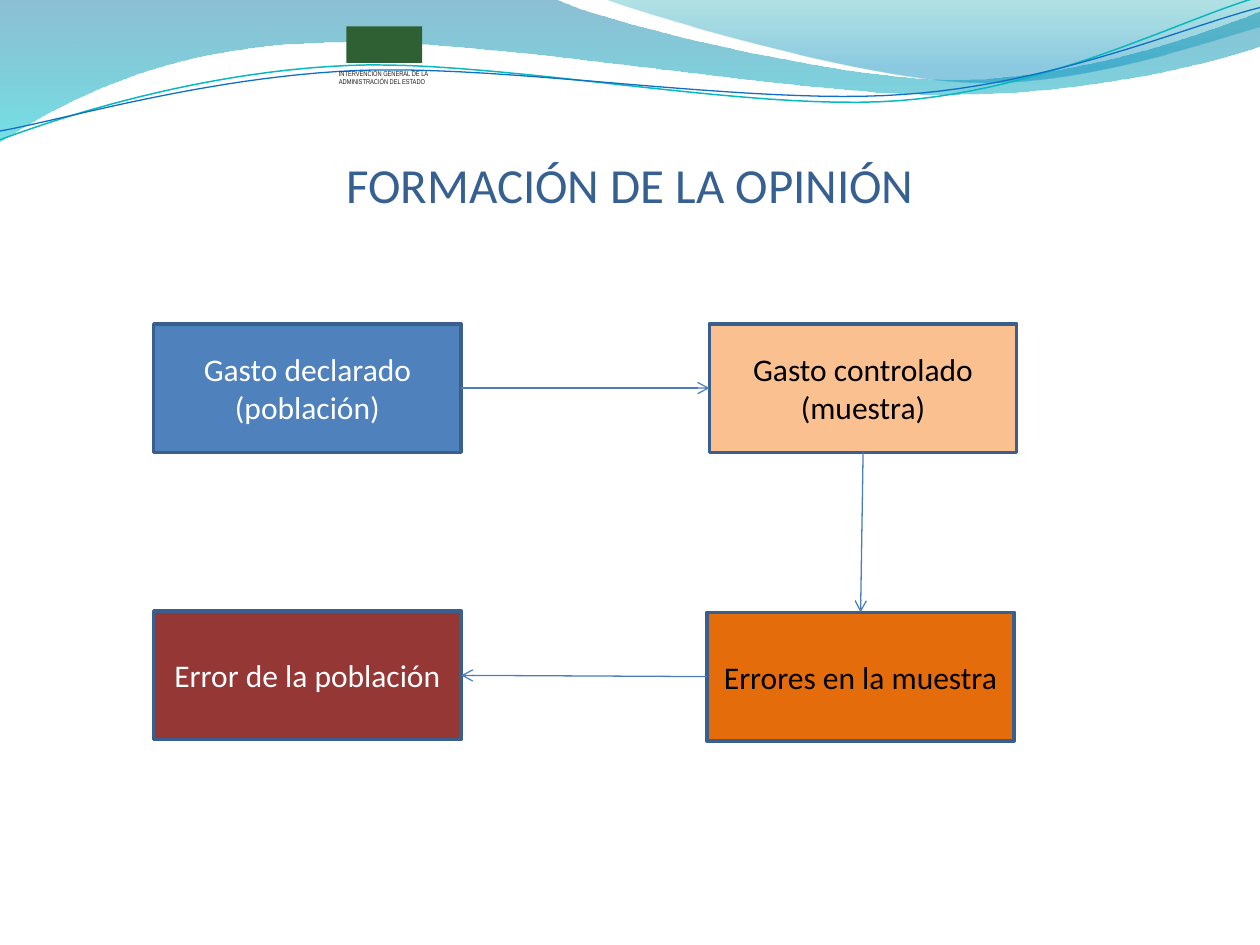
import pptx
import pptx.dml.color
import pptx.enum.shapes
import pptx.enum.text
import pptx.oxml
import pptx.oxml.ns
import pptx.util
from pptx.util import Inches

TOP, LEFT, BOTTOM, RIGHT = range(4)
CURVE_STEPS = 24
BANNER_AREAS = [
    ([(0, 0), (4.4, -0.01),
      [(4.76, 0.17), (6.64, 0.63), (7.58, 0.63)],
      [(8.53, 0.63), (9.58, 0.26), (10, 0.09)], (10.01, 0.36),
      [(9.83, 0.44), (8.7, 0.76), (7.46, 0.75)],
      [(6.22, 0.75), (3.82, 0.28), (2.57, 0.34)],
      [(1.29, 0.36), (0.46, 0.83), (-0.01, 1.13)]],
     [(0, "0074A1", 45), (1, "00C6CF", 55)]),
    ([(4.79, -0.01),
      [(5.09, 0.11), (6.82, 0.62), (7.69, 0.65)],
      [(8.56, 0.69), (9.61, 0.32), (10, 0.21)], (10, 0)],
     [(0, "00A1A9", 30), (0.8, "008BBF", 45)]),
]
BANNER_LINES = [
    ([(0, 1.11),
      [(0.48, 0.93), (1.58, 0.57), (2.77, 0.52)],
      [(3.95, 0.47), (5.93, 0.89), (7.13, 0.8)],
      [(8.33, 0.71), (9.38, 0.15), (9.98, -0.02)]], "0AB8BF", 0.85),
    ([(0, 1.04),
      [(0.47, 0.96), (1.64, 0.61), (2.83, 0.56)],
      [(4.03, 0.51), (5.97, 0.84), (7.17, 0.75)],
      [(8.36, 0.67), (9.41, 0.21), (10, 0.06)]], "0F6FC6", 0.75),
]
BOXES = {
    "declared": (1.22, 2.57, ["Gasto declarado (población)"], "4F81BD", "FFFFFF"),
    "controlled": (5.63, 2.57, ["Gasto controlado", "(muestra)"], "FAC090", "000000"),
    "sample": (5.61, 4.86, ["Errores en la muestra"], "E46C0A", "000000"),
    "population": (1.22, 4.85, ["Error de la población"], "953735", "FFFFFF"),
}
ARROWS = [
    ("declared", RIGHT, "controlled", LEFT),
    ("sample", LEFT, "population", RIGHT),
    ("controlled", BOTTOM, "sample", TOP),
]


def color(hex_value):
    """Return the RGB color for a hex string."""
    return pptx.dml.color.RGBColor.from_string(hex_value)


def set_line(shape, hex_value, width):
    """Give a shape or connector a solid line."""
    shape.line.color.rgb = color(hex_value)
    shape.line.width = pptx.util.Pt(width)


def write_text(shape, lines, size, font_name, hex_value, **frame_format):
    """Write one paragraph per line, all in one font."""
    centered = frame_format.pop("centered", True)
    frame = shape.text_frame
    frame_format = {"word_wrap": True,
                    "vertical_anchor": pptx.enum.text.MSO_ANCHOR.MIDDLE,
                    **frame_format}
    for name, value in frame_format.items():
        setattr(frame, name, value)
    frame.text = "\n".join(lines)
    alignment = pptx.enum.text.PP_ALIGN
    for paragraph in frame.paragraphs:
        paragraph.alignment = alignment.CENTER if centered else alignment.LEFT
        font_format = {"size": pptx.util.Pt(size), "name": font_name}
        for name, value in font_format.items():
            setattr(paragraph.font, name, value)
        paragraph.font.color.rgb = color(hex_value)


def trace(segments):
    """Turn points and cubic curve segments into a list of points."""
    points = [segments[0]]
    for segment in segments[1:]:
        if isinstance(segment, tuple):
            points.append(segment)
            continue
        controls = [points[-1], *segment]
        for step in range(1, CURVE_STEPS + 1):
            t = step / CURVE_STEPS
            weights = ((1 - t) ** 3, 3 * t * (1 - t) ** 2, 3 * t * t * (1 - t), t ** 3)
            points.append(tuple(
                sum(weight * control[axis] for weight, control in zip(weights, controls))
                for axis in (0, 1)))
    return [(Inches(x), Inches(y)) for x, y in points]


def add_outline(slide, segments, close):
    """Add a freeform that follows the segments."""
    points = trace(segments)
    builder = slide.shapes.build_freeform(*points[0])
    builder.add_line_segments(points[1:], close=close)
    shape = builder.convert_to_shape()
    shape.shadow.inherit = False
    return shape


def add_area(slide, segments, stops):
    """Add a closed area with a translucent vertical gradient."""
    shape = add_outline(slide, segments, True)
    shape.line.fill.background()
    shape.fill.gradient()
    shape.fill.gradient_angle = 270
    for stop, (position, hex_value, _) in zip(shape.fill.gradient_stops, stops):
        stop.position = position
        stop.color.rgb = color(hex_value)
    elements = shape._element.spPr.iter(pptx.oxml.ns.qn("a:srgbClr"))
    for element, (_, _, opacity) in zip(elements, stops):
        alpha = pptx.oxml.parse_xml(
            f'<a:alpha {pptx.oxml.ns.nsdecls("a")} val="{opacity * 1000}"/>')
        element.append(alpha)


def add_curve(slide, segments, hex_value, width):
    """Add an open curved line."""
    shape = add_outline(slide, segments, False)
    shape.fill.background()
    set_line(shape, hex_value, width)


def add_rectangle(slide, left, top, width, height, fill):
    """Add a filled rectangle without shadow."""
    shape = slide.shapes.add_shape(
        pptx.enum.shapes.MSO_SHAPE.RECTANGLE,
        Inches(left), Inches(top), Inches(width), Inches(height))
    shape.shadow.inherit = False
    shape.fill.solid()
    shape.fill.fore_color.rgb = color(fill)
    return shape


def add_box(slide, left, top, lines, fill, text_color):
    """Add a flow box with centered text."""
    shape = add_rectangle(slide, left, top, 2.44, 1.02, fill)
    set_line(shape, "3A5F8C", 2)
    write_text(shape, lines, 18, "Calibri", text_color)
    return shape


def add_arrow(slide, start, start_side, end, end_side):
    """Join two boxes with an arrow."""
    connector = slide.shapes.add_connector(
        pptx.enum.shapes.MSO_CONNECTOR.STRAIGHT, 0, 0, 0, 0)
    connector.begin_connect(start, start_side)
    connector.end_connect(end, end_side)
    set_line(connector, "4B7EBC", 0.75)
    namespace = pptx.oxml.ns.nsdecls("a")
    connector.line._get_or_add_ln().append(
        pptx.oxml.parse_xml(f'<a:tailEnd {namespace} type="arrow"/>'))
    connector._element.spPr.append(pptx.oxml.parse_xml(f"<a:effectLst {namespace}/>"))


def add_text(slide, left, top, width, height, *text, **frame_format):
    """Add a text box."""
    shape = slide.shapes.add_textbox(
        Inches(left), Inches(top), Inches(width), Inches(height))
    write_text(shape, *text, **frame_format)


def main():
    """Build the slide and save it."""
    presentation = pptx.Presentation()
    presentation.slide_width, presentation.slide_height = Inches(10), Inches(7.5)
    slide = presentation.slides.add_slide(presentation.slide_layouts[6])
    for area in BANNER_AREAS:
        add_area(slide, *area)
    for curve in BANNER_LINES:
        add_curve(slide, *curve)
    emblem = add_rectangle(slide, 2.75, 0.21, 0.6, 0.29, "2E6033")
    emblem.line.fill.background()
    add_text(slide, 2.69, 0.55, 0.73, 0.13,
             ["INTERVENCIÓN GENERAL DE LA", "ADMINISTRACIÓN DEL ESTADO"],
             4, "Arial Narrow", "1F1A17", centered=False, word_wrap=False,
             vertical_anchor=pptx.enum.text.MSO_ANCHOR.TOP,
             margin_left=0, margin_top=0, margin_right=0, margin_bottom=0)
    add_text(slide, 0.69, 0.98, 8.62, 0.96,
             ["FORMACIÓN DE LA OPINIÓN"], 28, "Calibri", "376092")
    boxes = {name: add_box(slide, *box) for name, box in BOXES.items()}
    for start, start_side, end, end_side in ARROWS:
        add_arrow(slide, boxes[start], start_side, boxes[end], end_side)
    presentation.save("out.pptx")


if __name__ == "__main__":
    main()
